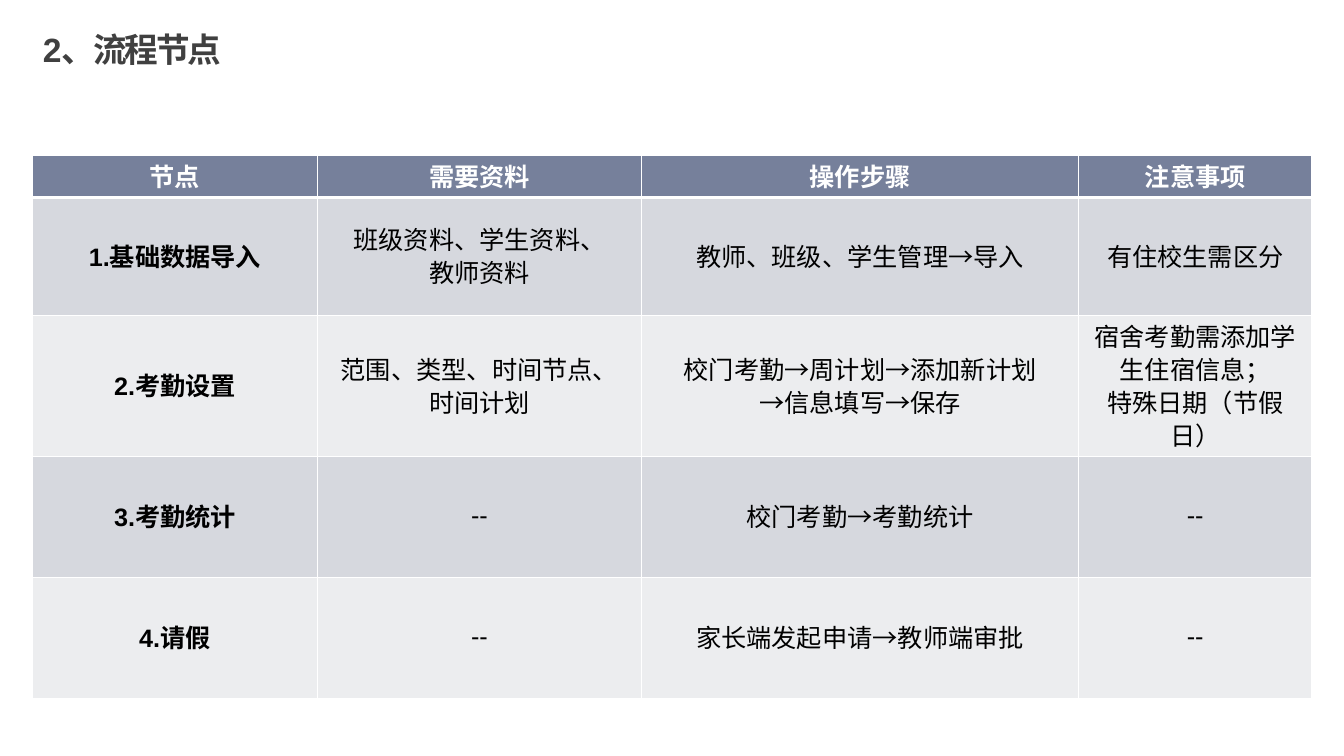
from lxml import etree
from pptx import Presentation
from pptx.dml.color import RGBColor
from pptx.enum import text
from pptx.oxml import ns
from pptx.util import Inches, Pt

TITLE = "2、流程节点"
ROWS = [
    ("节点", "需要资料", "操作步骤", "注意事项"),
    ("1.基础数据导入", "班级资料、学生资料、\n教师资料", "教师、班级、学生管理→导入", "有住校生需区分"),
    ("2.考勤设置", "范围、类型、时间节点、\n时间计划", "校门考勤→周计划→添加新计划\n→信息填写→保存",
     "宿舍考勤需添加学生住宿信息；\n特殊日期（节假日）"),
    ("3.考勤统计", "--", "校门考勤→考勤统计", "--"),
    ("4.请假", "--", "家长端发起申请→教师端审批", "--"),
]
COLUMN_WIDTHS = (2.83, 3.21, 4.34, 2.31)
ROW_HEIGHTS = (0.42, 1.17, 1.4, 1.2, 1.2)
HEADER_FILL, BAND_FILLS = "76809B", ("ECEDEF", "D6D8DE")
BORDER_COLOR = "FFFFFF"
TITLE_FORMAT = {"name": "Arial", "size": Pt(24), "bold": True}
CELL_FORMAT = {"name": "Arial", "size": Pt(18)}


def paint(target, color):
    target.rgb = RGBColor.from_string(color)


def write(frame, content, color, spacing, values):
    frame.text = content
    for para in frame.paragraphs:
        para.alignment = text.PP_ALIGN.CENTER
        para.line_spacing = spacing
        for span in para.runs:
            for name, value in values.items():
                setattr(span.font, name, value)
            paint(span.font.color, color)


def add_borders(cell, widths):
    properties = cell._tc.get_or_add_tcPr()
    for position, (side, width) in enumerate(widths.items()):
        line = etree.Element(ns.qn(f"a:ln{side}"), w=str(Pt(width)))
        fill = etree.SubElement(line, ns.qn("a:solidFill"))
        etree.SubElement(fill, ns.qn("a:srgbClr"), val=BORDER_COLOR)
        properties.insert(position, line)


def add_title(page):
    box = page.shapes.add_textbox(Inches(0.17), Inches(0.14), Inches(2.28), Inches(0.61))
    frame = box.text_frame
    frame.word_wrap = True
    frame.vertical_anchor = text.MSO_ANCHOR.MIDDLE
    write(frame, TITLE, "404040", 1.2, TITLE_FORMAT)
    frame.paragraphs[0].runs[0].font._element.set("spc", "-150")


def add_node_table(page):
    table = page.shapes.add_table(
        len(ROWS), len(COLUMN_WIDTHS), Inches(0.32), Inches(1.54),
        Inches(sum(COLUMN_WIDTHS)), Inches(sum(ROW_HEIGHTS))).table
    for column, width in zip(table.columns, COLUMN_WIDTHS):
        column.width = Inches(width)
    for row, height in zip(table.rows, ROW_HEIGHTS):
        row.height = Inches(height)
    for r, contents in enumerate(ROWS):
        header = r == 0
        for c, content in enumerate(contents):
            cell = table.cell(r, c)
            cell.vertical_anchor = text.MSO_ANCHOR.MIDDLE
            cell.fill.solid()
            paint(cell.fill.fore_color, HEADER_FILL if header else BAND_FILLS[r % 2])
            write(cell.text_frame, content, "FFFFFF" if header else "000000", 0.9,
                  {**CELL_FORMAT, "bold": header or c == 0})
            add_borders(cell, {"L": 1, "R": 1, "T": 3 if r == 1 else 1, "B": 3 if header else 1})


def main():
    """Build the process node slide and save it."""
    deck = Presentation()
    deck.slide_width, deck.slide_height = Inches(13.33), Inches(7.5)
    page = deck.slides.add_slide(deck.slide_layouts[6])
    add_title(page)
    add_node_table(page)
    deck.save("out.pptx")


if __name__ == "__main__":
    main()
